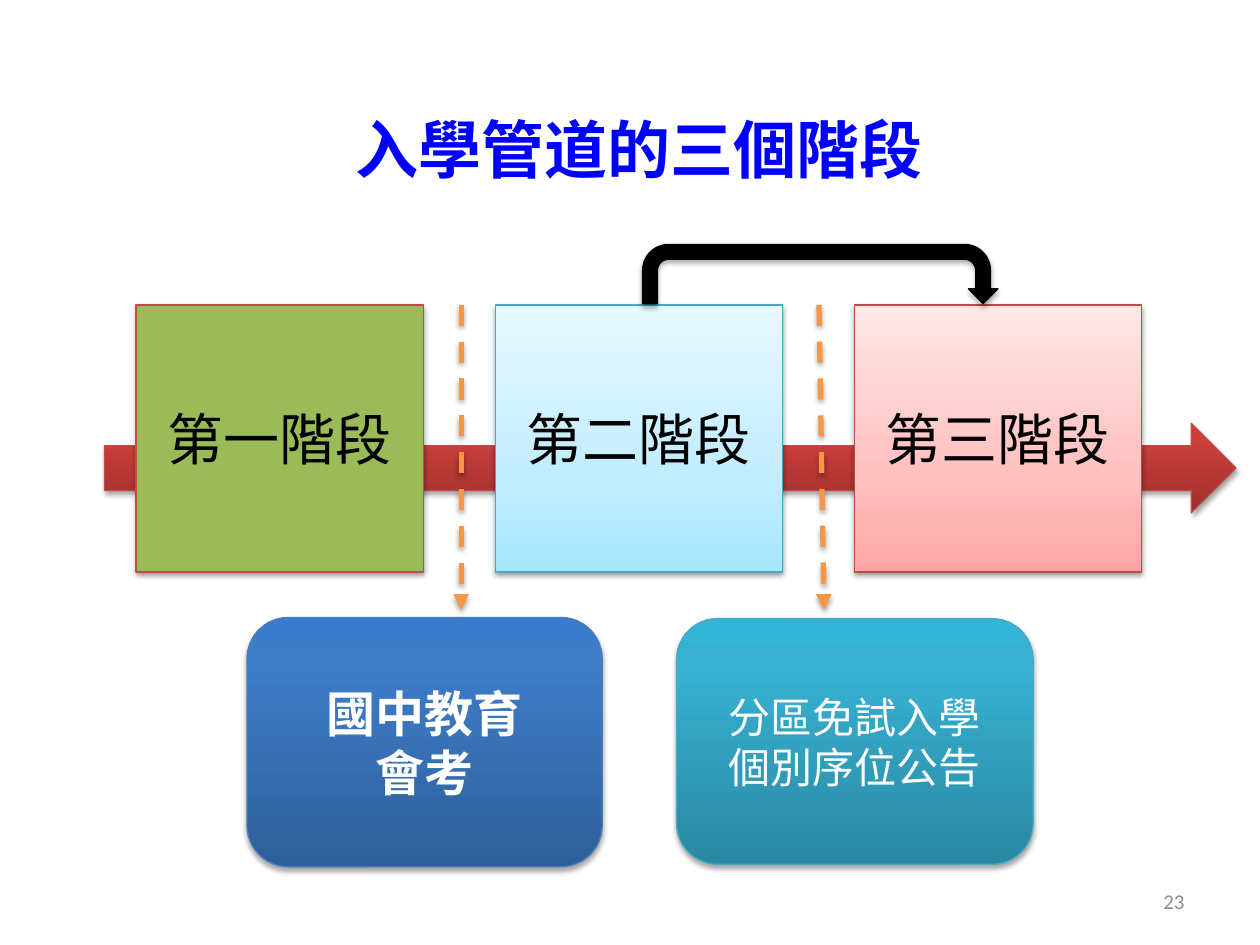
from dataclasses import dataclass

from lxml.etree import SubElement as Sub
from pptx import Presentation
from pptx.dml.color import RGBColor
from pptx.enum.dml import MSO_LINE as Dash
from pptx.enum.shapes import MSO_CONNECTOR as Conn, MSO_SHAPE as Geo
from pptx.enum.text import MSO_ANCHOR as Anchor, PP_ALIGN as Align
from pptx.oxml.ns import qn
from pptx.util import Inches, Pt

CJK = "Noto Sans CJK SC"
RED, TEAL, BLUE = "BF4C48", "46AAC5", "4B7EBC"
Stops = list[tuple[int, str]]


@dataclass
class Text:
    lines: list[str]
    size: int
    color: str
    bold: bool = False
    font: str = CJK
    align: Align = Align.CENTER


@dataclass
class Block:
    geo: Geo
    box: tuple[float, float, float, float]
    fill: str | Stops
    line: str
    text: Text | None = None
    alpha: int = 35
    drop: float = 1.8


def rgb(code: str) -> RGBColor:
    return RGBColor.from_string(code)


def paint(shape, fill: str | Stops) -> None:
    """Fill with one colour, or with stops that run from bottom to top."""
    if isinstance(fill, str):
        shape.fill.solid()
        shape.fill.fore_color.rgb = rgb(fill)
        return
    shape.fill.gradient()
    shape.fill.gradient_angle = 90
    stops = shape._element.spPr.find(".//" + qn("a:gsLst"))
    for old in list(stops):
        stops.remove(old)
    for pos, code in fill:
        stop = Sub(stops, qn("a:gs"), pos=str(pos * 1000))
        Sub(stop, qn("a:srgbClr"), val=code)


def shade(shape, alpha: int = 35, drop: float = 1.8) -> None:
    """Add a soft shadow that falls straight down."""
    props = shape._element.spPr
    for old in props.findall(qn("a:effectLst")):
        props.remove(old)
    glow = Sub(Sub(props, qn("a:effectLst")), qn("a:outerShdw"),
               blurRad=str(Pt(3.1)), dist=str(Pt(drop)), dir="5400000",
               rotWithShape="0")
    color = Sub(glow, qn("a:srgbClr"), val="000000")
    Sub(color, qn("a:alpha"), val=str(alpha * 1000))


def write(frame, text: Text) -> None:
    frame.word_wrap = True
    frame.vertical_anchor = Anchor.MIDDLE
    for i, line in enumerate(text.lines):
        para = frame.add_paragraph() if i else frame.paragraphs[0]
        para.alignment = text.align
        run = para.add_run()
        run.text = line
        font = run.font
        font.name, font.size, font.bold = text.font, Pt(text.size), text.bold
        font.color.rgb = rgb(text.color)
        Sub(run._r.get_or_add_rPr(), qn("a:ea"), typeface=text.font)


def draw(slide, block: Block):
    shape = slide.shapes.add_shape(block.geo, *map(Inches, block.box))
    paint(shape, block.fill)
    shape.line.color.rgb = rgb(block.line)
    shape.line.width = Pt(0.75)
    shade(shape, block.alpha, block.drop)
    if block.text:
        write(shape.text_frame, block.text)
    return shape


def point(slide, start: float, end: float) -> None:
    """Draw a dashed arrow from the stage row down to a note."""
    link = slide.shapes.add_connector(
        Conn.STRAIGHT, *map(Inches, (start, 2.42, end, 4.84)))
    link.line.color.rgb = rgb("F79646")
    link.line.width = Pt(3)
    link.line.dash_style = Dash.DASH
    Sub(link.line._get_or_add_ln(), qn("a:tailEnd"), type="triangle")
    shade(link)


def main() -> None:
    deck = Presentation()
    deck.slide_width, deck.slide_height = Inches(10), Inches(7.5)
    slide = deck.slides.add_slide(deck.slide_layouts[5])

    # Title
    title = slide.shapes.title
    title.left, title.top, title.width, title.height = map(
        Inches, (1.53, 0.66, 7.09, 1.03))
    write(title.text_frame, Text(["入學管道的三個階段"], 36, "0000FF", True))

    # Time arrow behind the stages
    draw(slide, Block(Geo.RIGHT_ARROW, (0.83, 3.36, 8.98, 0.71),
                      [(0, "9C2F2D"), (80, "CB3E3A"), (100, "CE3B37")], RED))

    # Three stages at an equal step
    stages = [
        ("第一階段", "9BBB59", RED),
        ("第二階段", [(0, "A7E6FF"), (35, "C1EDFF"), (100, "E7F8FF")], TEAL),
        ("第三階段", [(0, "FFA6A5"), (35, "FFC0BF"), (100, "FFE7E7")], RED),
    ]
    for i, (name, fill, line) in enumerate(stages):
        draw(slide, Block(Geo.RECTANGLE, (1.08 + 2.85 * i, 2.42, 2.28, 2.12),
                          fill, line, Text([name], 32, "000000"), 38, 1.6))

    # Bent arrow from stage two to stage three
    bend = draw(slide, Block(Geo.U_TURN_ARROW, (5.1, 1.94, 2.82, 0.47),
                             "000000", "000000"))
    for i, value in enumerate((0.25, 0.25, 0.25, 0.44, 1)):
        bend.adjustments[i] = value

    # Notes between the stages
    point(slide, 3.66, 3.66)
    draw(slide, Block(Geo.ROUNDED_RECTANGLE, (1.96, 4.9, 2.82, 1.98),
                      [(0, "2F5F99"), (80, "3D7CC7"), (100, "3A7CCB")], BLUE,
                      Text(["國中教育", "會考"], 28, "FFFFFF", True)))
    point(slide, 6.5, 6.54)
    draw(slide, Block(Geo.ROUNDED_RECTANGLE, (5.37, 4.91, 2.83, 1.95),
                      [(0, "2A88A2"), (80, "37B1D2"), (100, "34B4D6")], TEAL,
                      Text(["分區免試入學", "個別序位公告"], 24, "FFFFFF")))

    # Page number
    page = slide.shapes.add_textbox(*map(Inches, (7.17, 6.95, 2.33, 0.4)))
    write(page.text_frame,
          Text(["23"], 12, "8C8C8C", font="Calibri", align=Align.RIGHT))

    deck.save("out.pptx")


if __name__ == "__main__":
    main()
